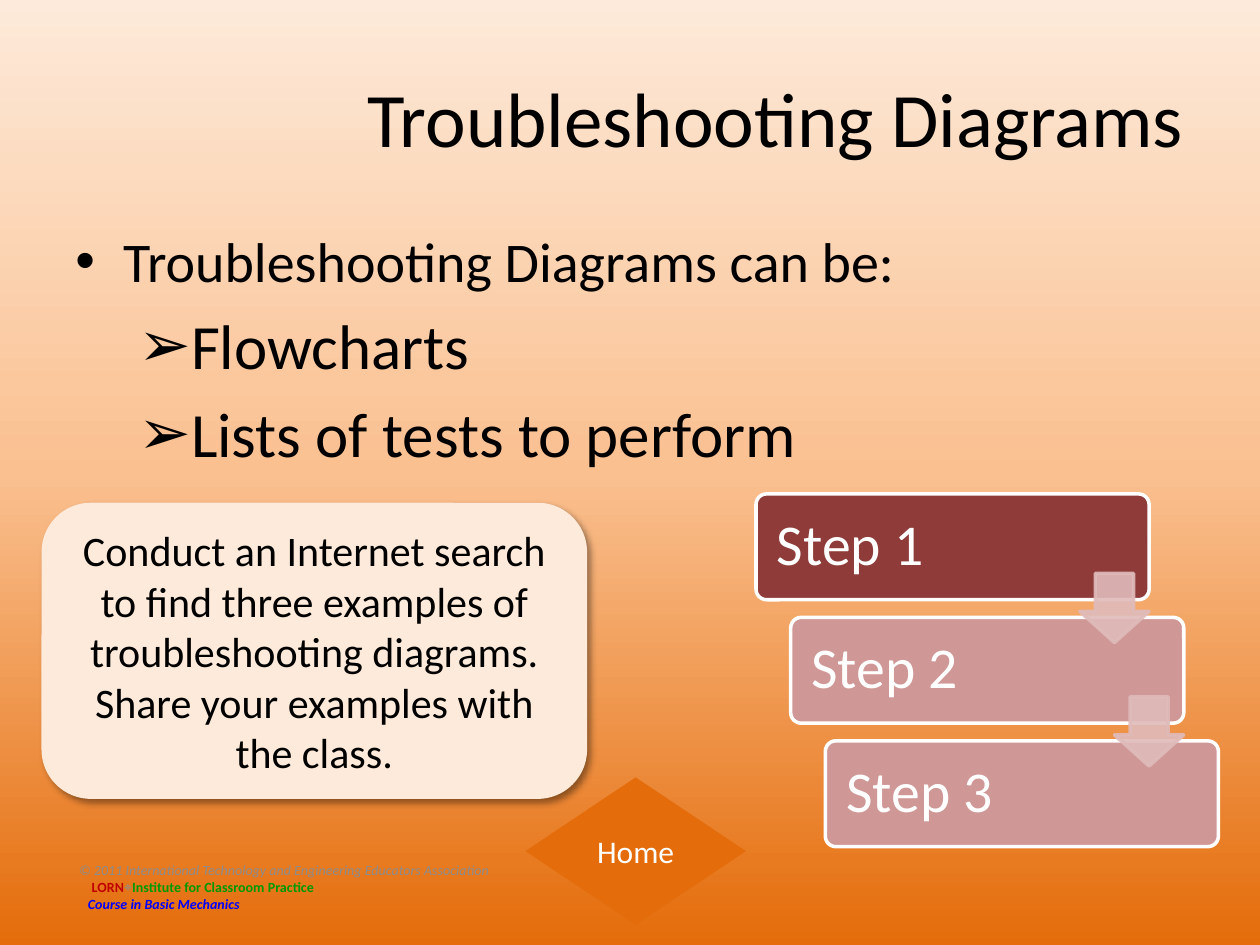
from copy import deepcopy

from lxml.etree import SubElement
from pptx import Presentation
from pptx.dml.color import RGBColor
from pptx.enum.shapes import MSO_SHAPE
from pptx.enum.text import MSO_ANCHOR, PP_ALIGN
from pptx.oxml.ns import qn
from pptx.util import Inches, Pt

BLACK = RGBColor(0x00, 0x00, 0x00)
WHITE = RGBColor(0xFF, 0xFF, 0xFF)
GRAY = RGBColor(0x8C, 0x8C, 0x8C)
RED = RGBColor(0xC0, 0x00, 0x00)
GREEN = RGBColor(0x00, 0x99, 0x00)
BLUE = RGBColor(0x00, 0x00, 0xFF)
CREAM = RGBColor(0xFD, 0xEA, 0xDA)
PEACH = RGBColor(0xFA, 0xC0, 0x90)
ORANGE = RGBColor(0xE4, 0x6C, 0x0A)
MAROON = RGBColor(0x8E, 0x3B, 0x39)
ROSE = RGBColor(0xCF, 0x97, 0x96)
PALE_ROSE = RGBColor(0xDF, 0xBB, 0xBA)


class SlideBuilder:
    font = "Calibri"

    def __init__(self, prs):
        self.slide = prs.slides.add_slide(prs.slide_layouts[5])

    def background(self, colors):
        fill = self.slide.background.fill
        fill.gradient()
        fill.gradient_angle = 270
        stops = self.slide.element.find(".//" + qn("a:gsLst"))
        while len(stops) < len(colors):
            stops.append(deepcopy(stops[0]))
        for i, (stop, color) in enumerate(zip(fill.gradient_stops, colors)):
            stop.position = i / (len(colors) - 1)
            stop.color.rgb = color

    def run(self, p, text, size, color=BLACK, **formats):
        r = p.add_run()
        r.text = text
        r.font.color.rgb = color
        for name, value in dict(name=self.font, size=Pt(size), **formats).items():
            setattr(r.font, name, value)

    def title(self, text, box):
        sp = self.slide.shapes.title
        sp.left, sp.top, sp.width, sp.height = map(Inches, box)
        sp.text_frame.vertical_anchor = MSO_ANCHOR.MIDDLE
        p = sp.text_frame.paragraphs[0]
        p.alignment = PP_ALIGN.RIGHT
        self.run(p, text, 44)

    def text_frame(self, box, anchor=MSO_ANCHOR.TOP):
        tf = self.slide.shapes.add_textbox(*map(Inches, box)).text_frame
        tf.word_wrap = True
        tf.vertical_anchor = anchor
        return tf

    def bullets(self, items, box):
        """Add items of (text, size, bullet, left margin, hanging indent)."""
        tf = self.text_frame(box)
        for i, (text, size, bullet, margin, hanging) in enumerate(items):
            p = tf.add_paragraph() if i else tf.paragraphs[0]
            if i:
                p.space_before = Pt(size * 0.2)
            pPr = p._p.get_or_add_pPr()
            pPr.set("marL", str(Inches(margin)))
            pPr.set("indent", str(-Inches(hanging)))
            SubElement(pPr, qn("a:buFont"), typeface="Arial")
            SubElement(pPr, qn("a:buChar"), char=bullet)
            self.run(p, text, size)

    def footer(self, lines, box):
        """Add lines of (left margin, runs)."""
        tf = self.text_frame(box, MSO_ANCHOR.MIDDLE)
        for i, (margin, runs) in enumerate(lines):
            p = tf.add_paragraph() if i else tf.paragraphs[0]
            p._p.get_or_add_pPr().set("marL", str(Inches(margin)))
            for text, color, bold, italic in runs:
                self.run(p, text, 8, color, bold=bold, italic=italic)

    def shape(self, kind, box, fill, line=None, adjustments=()):
        sp = self.slide.shapes.add_shape(kind, *map(Inches, box))
        sp.shadow.inherit = False
        sp.fill.solid()
        sp.fill.fore_color.rgb = fill
        if line is None:
            sp.line.fill.background()
        else:
            sp.line.color.rgb = line
            sp.line.width = Pt(2)
        for i, value in enumerate(adjustments):
            sp.adjustments[i] = value
        return sp

    def label(self, sp, text, size, color=BLACK, align=PP_ALIGN.CENTER, inset=0.1):
        tf = sp.text_frame
        tf.word_wrap = True
        tf.vertical_anchor = MSO_ANCHOR.MIDDLE
        tf.margin_left = tf.margin_right = Inches(inset)
        p = tf.paragraphs[0]
        p.alignment = align
        self.run(p, text, size, color)
        return p

    def step(self, text, box, fill):
        sp = self.shape(MSO_SHAPE.ROUNDED_RECTANGLE, box, fill, WHITE, [0.1])
        p = self.label(sp, text, 33, WHITE, PP_ALIGN.LEFT, 0.14)
        p.line_spacing = 0.9

    def step_arrow(self, box):
        sp = self.shape(MSO_SHAPE.DOWN_ARROW, box, PALE_ROSE, PALE_ROSE, [0.55, 0.45])
        for color in sp._element.spPr.iter(qn("a:srgbClr")):
            SubElement(color, qn("a:alpha"), val="90000")

    def soft_shadow(self, sp):
        effects = sp._element.spPr.find(qn("a:effectLst"))
        shadow = SubElement(effects, qn("a:outerShdw"), blurRad=str(Pt(4)),
                            dist=str(Pt(3)), dir="2700000", algn="tl", rotWithShape="0")
        color = SubElement(shadow, qn("a:srgbClr"), val="000000")
        SubElement(color, qn("a:alpha"), val="40000")


def main():
    prs = Presentation()
    prs.slide_width, prs.slide_height = Inches(10), Inches(7.5)
    s = SlideBuilder(prs)
    s.background([CREAM, PEACH, ORANGE])
    s.footer([
        (0, [("© 2011 International Technology and Engineering Educators Association",
              GRAY, False, True)]),
        (0.1, [("LORN", RED, True, False), ("⌖", GRAY, True, False),
               ("Institute for Classroom Practice", GREEN, True, False)]),
        (0.07, [("Course in Basic Mechanics", BLUE, True, True)]),
    ], (0.53, 6.75, 4.83, 0.58))
    s.title("Troubleshooting Diagrams", (0.5, 0.3, 9, 1.25))
    s.bullets([
        ("Troubleshooting Diagrams can be:", 32, "•", 0.38, 0.38),
        ("Flowcharts", 36, "➢", 0.81, 0.31),
        ("Lists of tests to perform", 36, "➢", 0.81, 0.31),
    ], (0.5, 1.75, 9, 4.95))

    left, top, dx, dy = 6, 3.92, 0.275, 0.98
    for i, fill in enumerate([MAROON, ROSE, ROSE]):
        s.step(f"Step {i + 1}", (left + i * dx, top + i * dy, 3.12, 0.84), fill)
    for i in range(2):
        s.step_arrow((left + 2.57 + i * dx, top + 0.63 + i * dy, 0.55, 0.55))

    task = s.shape(MSO_SHAPE.ROUNDED_RECTANGLE, (0.33, 3.99, 4.33, 2.35), CREAM)
    s.soft_shadow(task)
    s.label(task, "Conduct an Internet search to find three examples of "
                  "troubleshooting diagrams. Share your examples with the class.", 24)
    home = s.shape(MSO_SHAPE.FLOWCHART_DECISION, (4.17, 6.17, 1.75, 1.17), ORANGE)
    s.label(home, "Home", 18, WHITE)
    prs.save("out.pptx")


if __name__ == "__main__":
    main()
